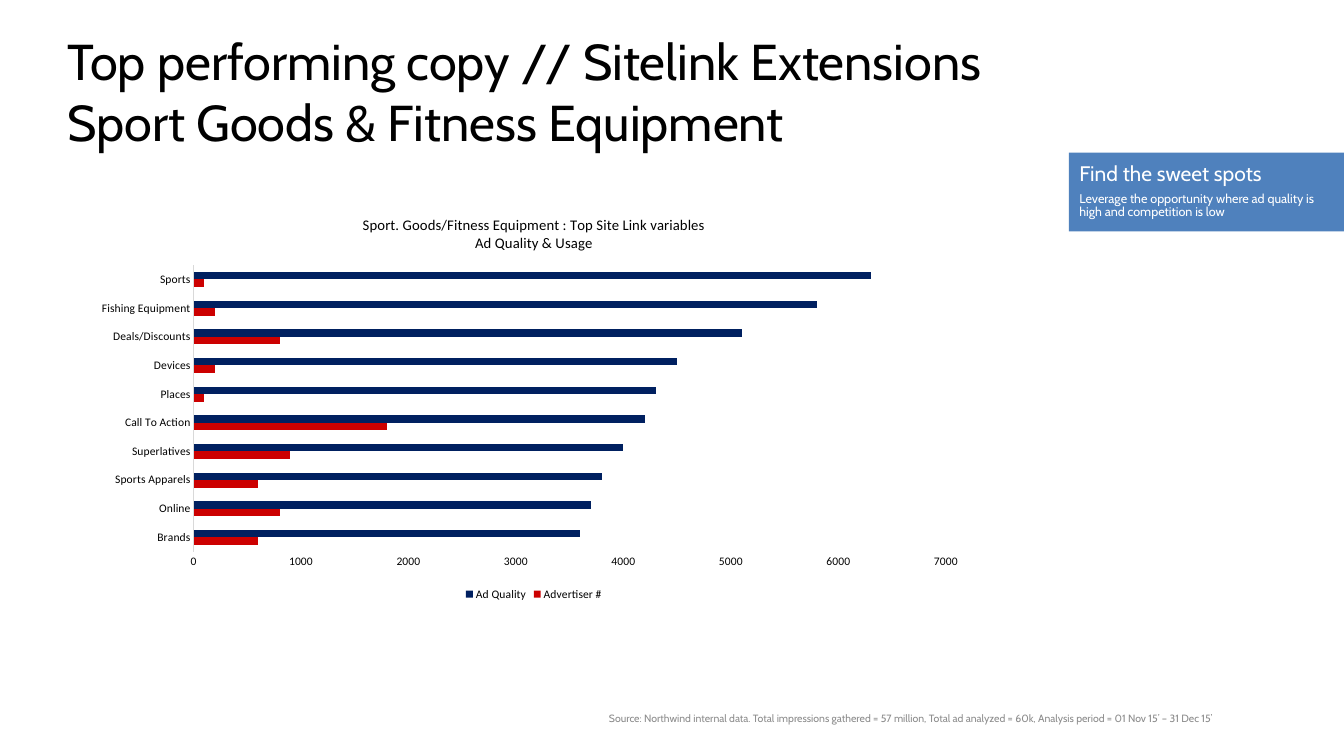
from pptx import Presentation
from pptx import util as u
from pptx.chart.data import CategoryChartData
from pptx.dml.color import RGBColor
from pptx.enum import chart as ch, shapes, text
from pptx.oxml import parse_xml
from pptx.oxml.ns import nsdecls

Pt = u.Pt
NAVY, RED, BLUE = "002060", "CC0000", "4F81BD"
BLACK, WHITE, GREY, RULE = "000000", "FFFFFF", "8C8C8C", "D9D9D9"

CATS = ["Brands", "Online", "Sports Apparels", "Superlatives", "Call To Action",
        "Places", "Devices", "Deals/Discounts", "Fishing Equipment", "Sports"]
SERIES = [
    ("Advertiser #", RED, [600, 800, 600, 900, 1800, 100, 200, 800, 200, 100]),
    ("Ad Quality", NAVY, [3600, 3700, 3800, 4000, 4200, 4300, 4500, 5100, 5800, 6300]),
]


def rgb(code):
    return RGBColor.from_string(code)


def put(item, **vals):
    for key, val in vals.items():
        setattr(item, key, val)


def style(font, size, color, name="Cabin"):
    put(font, size=Pt(size), name=name, bold=False)
    font.color.rgb = rgb(color)


def write(frame, lines, color, inset=(0, 0, 0, 0), **form):
    """Fill a frame with paragraphs given as (words, size)."""
    left, top, right, low = map(Pt, inset)
    put(frame, word_wrap=True, vertical_anchor=text.MSO_ANCHOR.TOP,
        margin_left=left, margin_top=top, margin_right=right, margin_bottom=low)
    for i, (words, size) in enumerate(lines):
        para = frame.add_paragraph() if i else frame.paragraphs[0]
        para.text = words
        put(para, alignment=text.PP_ALIGN.LEFT, **form)
        for run in para.runs:
            style(run.font, size, color)


def label(slide, box, words, size, color):
    area = slide.shapes.add_textbox(*map(Pt, box))
    write(area.text_frame, [(words, size)], color)


def callout(slide, box):
    card = slide.shapes.add_shape(shapes.MSO_SHAPE.RECTANGLE, *map(Pt, box))
    card.shadow.inherit = False
    card.fill.solid()
    card.fill.fore_color.rgb = rgb(BLUE)
    card.line.fill.background()
    lines = [("Find the sweet spots", 20),
             ("Leverage the opportunity where ad quality is high and competition is low", 12)]
    write(card.text_frame, lines, WHITE, (10, 10, 7.2, 7.2),
          line_spacing=0.9, space_after=Pt(6))


def place(plot, **parts):
    """Pin the inner plot area, in fractions of the chart."""
    marks = "".join(f'<c:{k}Mode val="edge"/>' for k in "xy")
    sizes = "".join(f'<c:{k} val="{v}"/>' for k, v in parts.items())
    for old in plot.findall("{*}layout"):
        plot.remove(old)
    plot.insert(0, parse_xml(
        f'<c:layout {nsdecls("c")}><c:manualLayout><c:layoutTarget val="inner"/>'
        f'{marks}{sizes}</c:manualLayout></c:layout>'))


def bars(slide, box):
    data = CategoryChartData(number_format="General")
    data.categories = CATS
    for name, _, vals in SERIES:
        data.add_series(name, vals)
    chart = slide.shapes.add_chart(
        ch.XL_CHART_TYPE.BAR_CLUSTERED, *map(Pt, box), data).chart
    style(chart.font, 10, BLACK, "Calibri")

    # Title
    chart.has_title = True
    para = chart.chart_title.text_frame.paragraphs[0]
    para.text = "Sport. Goods/Fitness Equipment : Top Site Link variables\vAd Quality & Usage"
    for run in para.runs:
        style(run.font, 14, BLACK, "Calibri")
    chart.chart_title.include_in_layout = False

    # Bars
    plot = chart.plots[0]
    put(plot, gap_width=182, overlap=0, vary_by_categories=False)
    for item, (_, color, _) in zip(plot.series, SERIES):
        item.format.fill.solid()
        item.format.fill.fore_color.rgb = rgb(color)
        item.invert_if_negative = False

    # Axes
    for axis in (chart.category_axis, chart.value_axis):
        put(axis, has_major_gridlines=False, major_tick_mark=ch.XL_TICK_MARK.NONE,
            minor_tick_mark=ch.XL_TICK_MARK.NONE)
        style(axis.tick_labels.font, 11, BLACK, "Calibri")
    line = chart.category_axis.format.line
    line.color.rgb = rgb(RULE)
    line.width = Pt(0.75)
    put(chart.value_axis, minimum_scale=0, maximum_scale=7000, major_unit=1000)
    chart.value_axis.format.line.fill.background()

    # Legend
    chart.has_legend = True
    put(chart.legend, position=ch.XL_LEGEND_POSITION.BOTTOM, include_in_layout=False)
    style(chart.legend.font, 11, BLACK, "Calibri")
    place(chart._chartSpace.chart.plotArea, x=0.12, y=0.16, w=0.84, h=0.71)


def main():
    deck = Presentation()
    put(deck, slide_width=Pt(1280), slide_height=Pt(720))
    slide = deck.slides.add_slide(deck.slide_layouts[6])
    # Heading
    label(slide, (64, 29, 1152, 117),
          "Top performing copy // Sitelink Extensions\vSport Goods & Fitness Equipment",
          48, BLACK)
    # Source note
    label(slide, (580, 678, 636, 12),
          "Source: Northwind internal data. Total impressions gathered = 57 million, "
          "Total ad analyzed = 60k, Analysis period = 01 Nov 15’ – 31 Dec 15’", 10, GREY)
    callout(slide, (1018, 145.5, 262, 75))
    bars(slide, (82, 191, 853, 384.5))
    deck.save("out.pptx")


if __name__ == "__main__":
    main()
